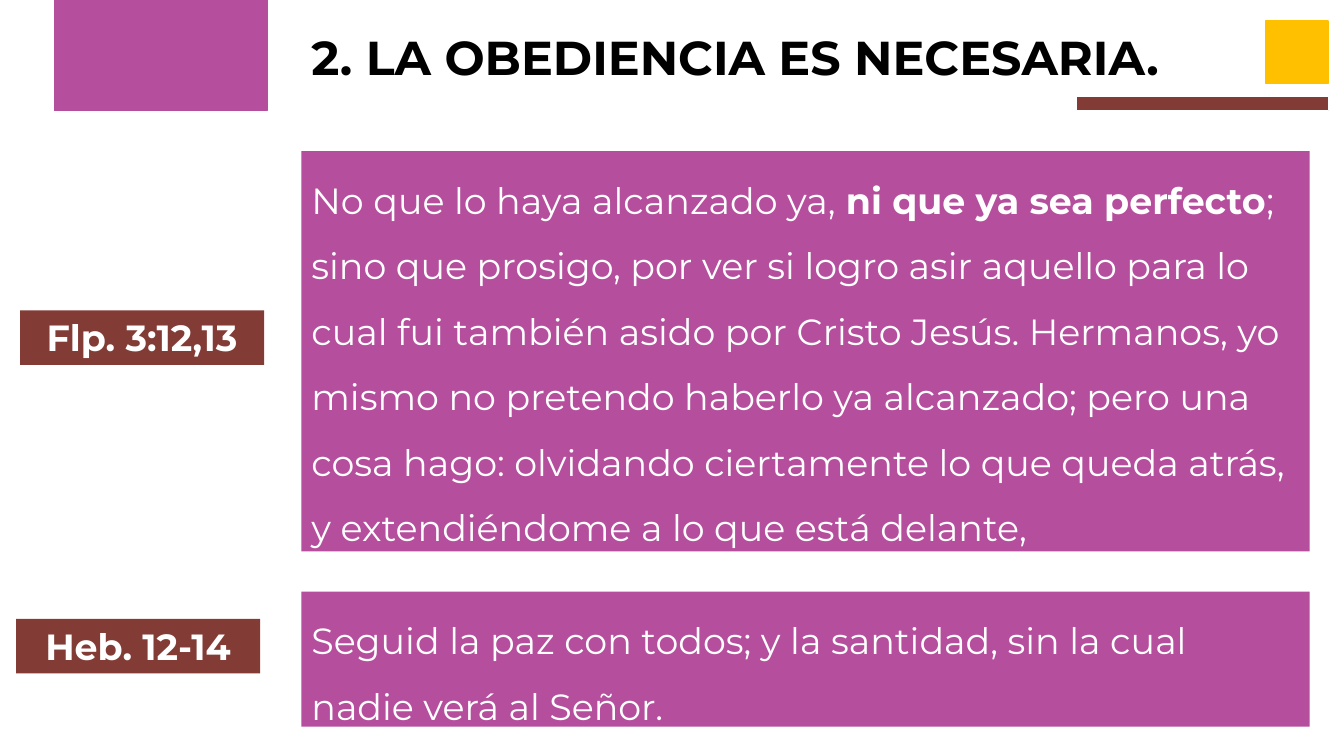
from dataclasses import dataclass
from typing import Optional

import pptx
import pptx.dml.color
import pptx.enum.shapes
import pptx.enum.text
import pptx.util

Inches = pptx.util.Inches
Align = pptx.enum.text.PP_ALIGN

COLORS = {
    "plum": "B54E9D",
    "brown": "823B35",
    "gold": "FFC000",
    "white": "FFFFFF",
    "black": "000000",
}
FONT = "Montserrat"


@dataclass
class Run:
    text: str
    bold: bool = False


@dataclass
class Box:
    left: float
    top: float
    width: float
    height: float
    fill: Optional[str] = None
    line: Optional[str] = None
    runs: tuple[Run, ...] = ()
    size: int = 26
    color: str = "white"
    align: Align = Align.LEFT
    space: float = 1.0


def rgb(name: str) -> pptx.dml.color.RGBColor:
    return pptx.dml.color.RGBColor.from_string(COLORS[name])


def write(frame, box: Box) -> None:
    frame.word_wrap = True
    frame.auto_size = pptx.enum.text.MSO_AUTO_SIZE.SHAPE_TO_FIT_TEXT
    frame.vertical_anchor = pptx.enum.text.MSO_ANCHOR.TOP
    para = frame.paragraphs[0]
    para.alignment = box.align
    para.line_spacing = box.space
    for item in box.runs:
        run = para.add_run()
        run.text = item.text
        run.font.name = FONT
        run.font.size = pptx.util.Pt(box.size)
        run.font.bold = item.bold
        run.font.color.rgb = rgb(box.color)


def draw(slide, box: Box) -> None:
    place = [Inches(n) for n in (box.left, box.top, box.width, box.height)]
    if box.fill:
        shape = slide.shapes.add_shape(
            pptx.enum.shapes.MSO_SHAPE.RECTANGLE, *place)
        shape.shadow.inherit = False
        shape.fill.solid()
        shape.fill.fore_color.rgb = rgb(box.fill)
        if box.line:
            shape.line.color.rgb = rgb(box.line)
            shape.line.width = pptx.util.Pt(1)
        else:
            shape.line.fill.background()
    else:
        shape = slide.shapes.add_textbox(*place)
    if box.runs:
        write(shape.text_frame, box)


def label(left: float, top: float, text: str) -> Box:
    return Box(left, top, 2.42, 0.54, "brown",
               runs=(Run(text, True),), align=Align.CENTER)


def verse(top: float, height: float, *runs: Run) -> Box:
    return Box(2.99, top, 10, height, "plum", runs=runs, space=1.5)


BOXES = [
    # Corner accents
    Box(12.55, 0.21, 0.62, 0.62, "gold", "gold"),
    Box(10.68, 0.96, 2.5, 0.14, "brown", "white"),
    Box(0.54, 0, 2.11, 1.1, "plum", "plum"),
    # Second verse
    label(0.16, 6.14, "Heb. 12-14"),
    verse(5.87, 1.34, Run("Seguid la paz con todos; y la santidad, "
                          "sin la cual nadie verá al Señor.")),
    # First verse
    label(0.2, 3.08, "Flp. 3:12,13"),
    verse(1.5, 3.97,
          Run("No que lo haya alcanzado ya, "),
          Run("ni que ya sea perfecto", True),
          Run("; sino que prosigo, por ver si logro asir aquello para lo "
              "cual fui también asido por Cristo Jesús. Hermanos, yo mismo "
              "no pretendo haberlo ya alcanzado; pero una cosa hago: "
              "olvidando ciertamente lo que queda atrás, y extendiéndome "
              "a lo que está delante,")),
    # Title
    Box(2.99, 0.23, 9.39, 0.67, size=34, color="black",
        runs=(Run("2. LA OBEDIENCIA ES NECESARIA.", True),)),
]


def main() -> None:
    deck = pptx.Presentation()
    deck.slide_width = Inches(13.33)
    deck.slide_height = Inches(7.5)
    slide = deck.slides.add_slide(deck.slide_layouts[6])
    for box in BOXES:
        draw(slide, box)
    deck.save("out.pptx")


if __name__ == "__main__":
    main()
